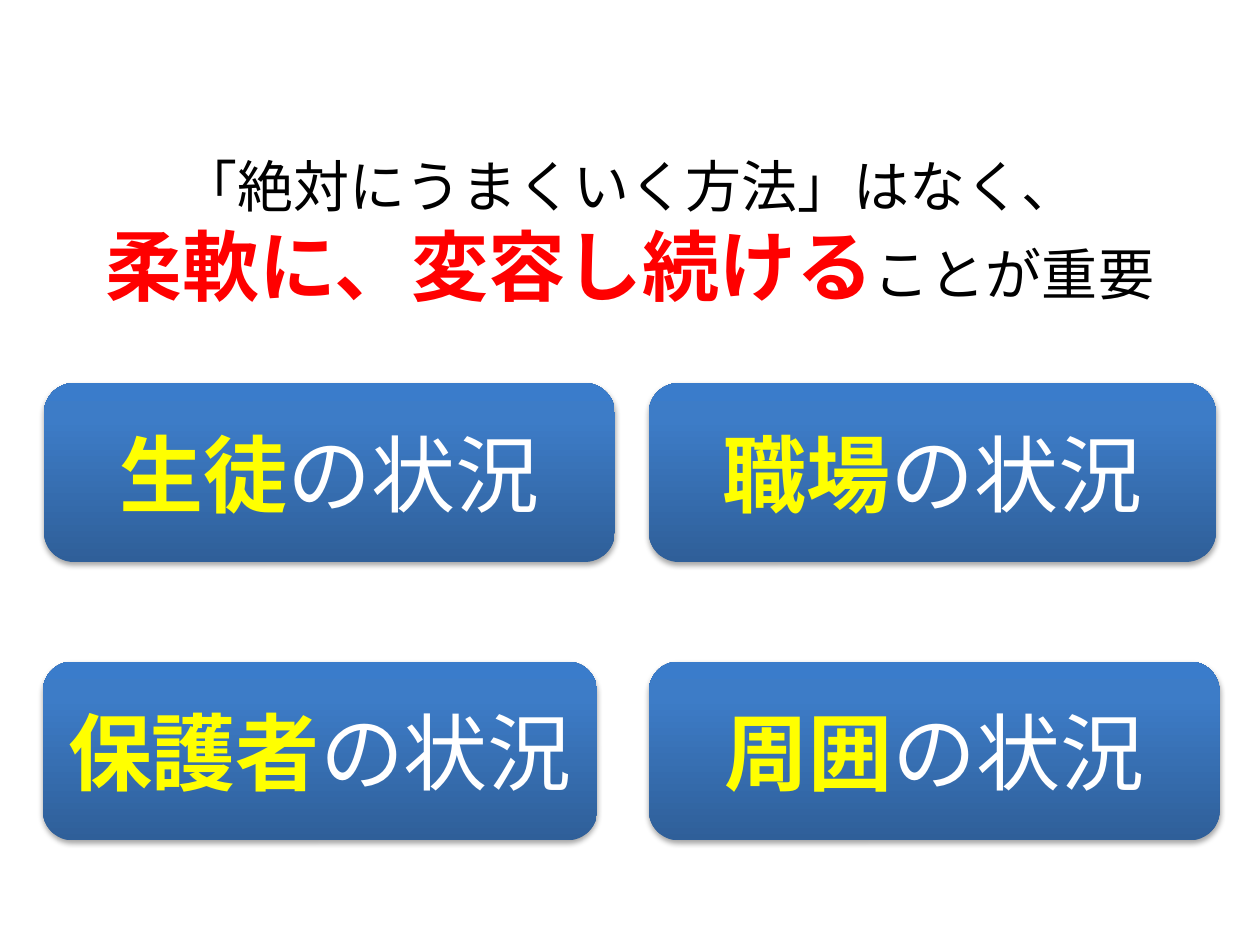
import pptx
import pptx.dml.color
import pptx.enum.lang
import pptx.enum.shapes
import pptx.enum.text
import pptx.oxml
import pptx.oxml.ns
import pptx.util
from pptx.util import Inches

FONT = "Roboto"
COLORS = {
    "text": "000000",
    "accent": "FF0000",
    "highlight": "FFFF00",
    "white": "FFFFFF",
    "card_bottom": "2F5F99",
    "card_middle": "3D7CC7",
    "card_top": "3A7CCB",
    "shadow": "000000",
}
NAMESPACE = pptx.oxml.ns.nsdecls("a")
ROW_TOPS = (3.04, 5.25)
CARD_HEIGHT = 1.42
# subject, row, left, width
CARDS = [
    ("生徒", 0, 0.35, 4.53),
    ("職場", 0, 5.15, 4.5),
    ("周囲", 1, 5.15, 4.53),
    ("保護者", 1, 0.34, 4.4),
]


def add_span(para, text, size, color, bold=False):
    span = para.add_run()
    span.text = text
    font = span.font
    font.size = pptx.util.Pt(size)
    font.bold = bold
    font.color.rgb = pptx.dml.color.RGBColor.from_string(COLORS[color])
    font.name = FONT
    font.language_id = pptx.enum.lang.MSO_LANGUAGE_ID.JAPANESE
    east_asian = pptx.oxml.parse_xml(f'<a:ea {NAMESPACE} typeface="{FONT}"/>')
    span.font._element.append(east_asian)


def add_message(page):
    box = page.shapes.add_textbox(Inches(0.5), Inches(1.15), Inches(9), Inches(1.73))
    frame = box.text_frame
    frame.word_wrap = True
    first, second = frame.paragraphs[0], frame.add_paragraph()
    for para in (first, second):
        para.alignment = pptx.enum.text.PP_ALIGN.CENTER
    add_span(first, "「絶対にうまくいく方法」はなく、", 32, "text")
    add_span(second, "柔軟に、変容し続ける", 44, "accent", bold=True)
    add_span(second, "ことが重要", 32, "text")


def style_card(card):
    """Give the card its upward gradient and soft shadow."""
    stops = "".join(
        f'<a:gs pos="{position * 1000}"><a:srgbClr val="{COLORS[name]}"/></a:gs>'
        for position, name in ((0, "card_bottom"), (80, "card_middle"), (100, "card_top"))
    )
    gradient = pptx.oxml.parse_xml(
        f'<a:gradFill {NAMESPACE} rotWithShape="1"><a:gsLst>{stops}</a:gsLst>'
        '<a:lin ang="16200000" scaled="0"/></a:gradFill>'
    )
    effects = pptx.oxml.parse_xml(
        f'<a:effectLst {NAMESPACE}><a:outerShdw blurRad="{pptx.util.Pt(3.1)}" '
        f'dist="{pptx.util.Pt(1.8)}" dir="5400000" rotWithShape="0">'
        f'<a:srgbClr val="{COLORS["shadow"]}"><a:alpha val="35000"/></a:srgbClr>'
        "</a:outerShdw></a:effectLst>"
    )
    card.line.fill.background()
    properties = card._element.spPr
    properties.find(pptx.oxml.ns.qn("a:ln")).addprevious(gradient)
    properties.append(effects)


def add_card(page, subject, row, left, width):
    card = page.shapes.add_shape(
        pptx.enum.shapes.MSO_SHAPE.ROUNDED_RECTANGLE,
        Inches(left), Inches(ROW_TOPS[row]), Inches(width), Inches(CARD_HEIGHT),
    )
    style_card(card)
    frame = card.text_frame
    frame.vertical_anchor = pptx.enum.text.MSO_ANCHOR.MIDDLE
    para = frame.paragraphs[0]
    para.alignment = pptx.enum.text.PP_ALIGN.CENTER
    add_span(para, subject, 48, "highlight", bold=True)
    add_span(para, "の状況", 48, "white")


def main():
    deck = pptx.Presentation()
    deck.slide_width, deck.slide_height = Inches(10), Inches(7.5)
    page = deck.slides.add_slide(deck.slide_layouts[6])
    add_message(page)
    for card in CARDS:
        add_card(page, *card)
    deck.save("out.pptx")


if __name__ == "__main__":
    main()
